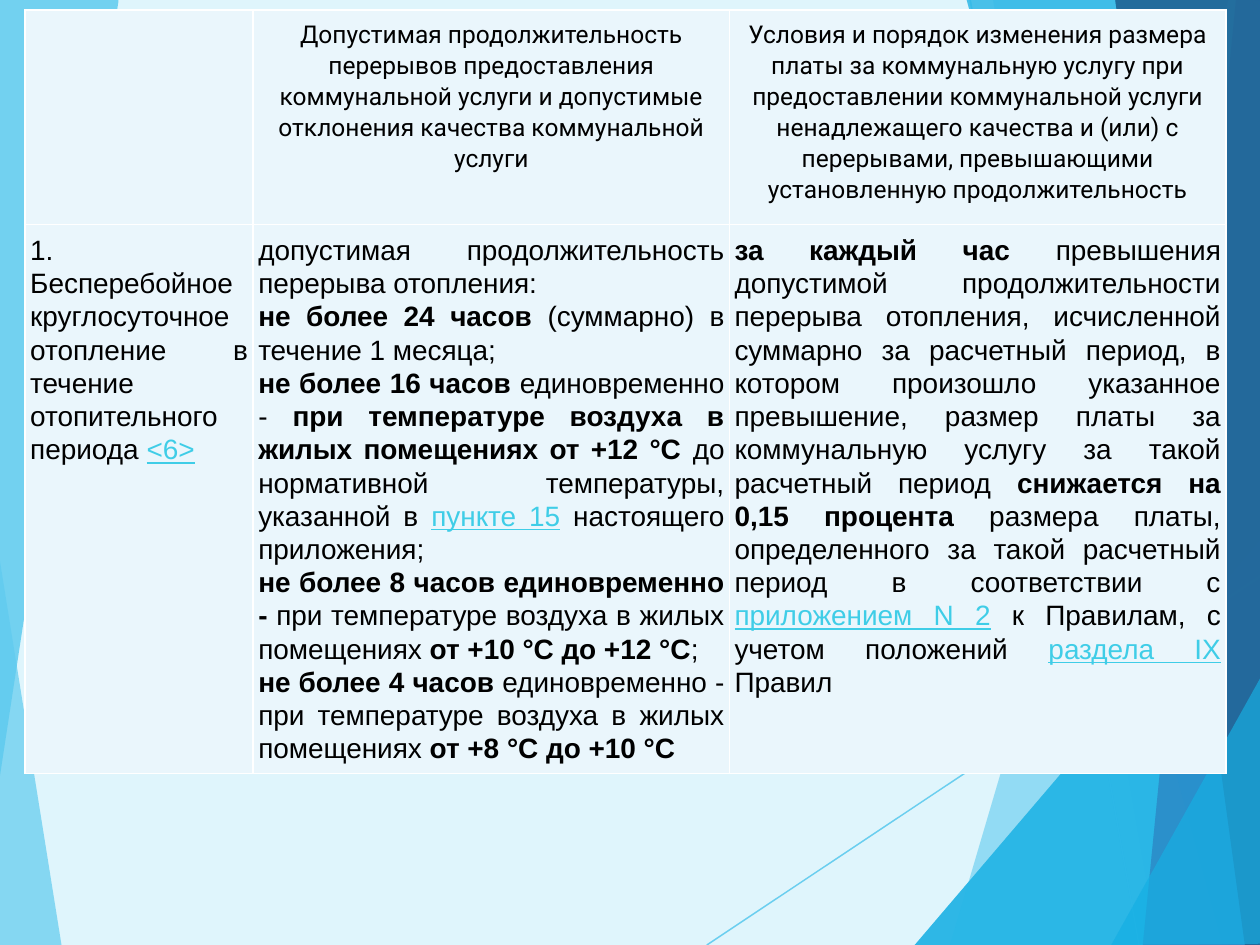
"""Build the slide on heating breaks and fee changes over a faceted blue backdrop."""
from lxml import etree
from pptx import Presentation
from pptx.dml.color import RGBColor
from pptx.enum.shapes import MSO_CONNECTOR
from pptx.enum.text import PP_ALIGN
from pptx.oxml.ns import qn
from pptx.util import Inches, Pt

CENTER, JUSTIFY = PP_ALIGN.CENTER, PP_ALIGN.JUSTIFY
STRAIGHT = MSO_CONNECTOR.STRAIGHT
PALE = RGBColor(0xDF, 0xF5, 0xFC)
SKY = RGBColor(0x5F, 0xCB, 0xEF)
CYAN = RGBColor(0x17, 0xB0, 0xE4)
BLUE = RGBColor(0x2E, 0x83, 0xC3)
NAVY = RGBColor(0x22, 0x62, 0x92)
CELL = RGBColor(0xEA, 0xF6, 0xFC)
LINK = RGBColor(0x3F, 0xCD, 0xE7)
BLACK = RGBColor(0, 0, 0)
WHITE = RGBColor(0xFF, 0xFF, 0xFF)

LEFT_LOW = (SKY, 70, [(-0.01, 4.39), (0.49, 7.51), (-0.01, 7.5)])
LEFT_TOP = (SKY, 85, [(-0.01, 0), (0.94, -0.01), (0.94, 0.01), (-0.01, 6.22)])
RAYS = [(5.61, 7.5, 10.01, 4.57), (7.7, 0, 9.04, 7.5)]
FACETS = [
    (SKY, 36, [(9.75, 0), (7.54, 7.5), (10.02, 7.51), (10.01, 0.01)]),
    (SKY, 20, [(7.88, -0.01), (9.19, 7.5), (10.01, 7.5), (10.01, -0.01)]),
    (CYAN, 66, [(7.26, 7.5), (10, 4.29), (10.01, 7.5)]),
    (CYAN, 50, [(7.67, -0.01), (9.7, 7.5), (10.01, 7.49), (10.01, -0.01)]),
    (BLUE, 70, [(9.81, -0.01), (9.07, 7.5), (10.01, 7.5), (10, -0.01)]),
    (NAVY, 82, [(8.85, -0.01), (9.88, 7.5), (10.02, 7.5), (10, -0.01)]),
    (CYAN, 66, [(8.82, 7.5), (10.02, 5.35), (10.02, 7.49)]),
]

COLS, ROWS = [1.81, 3.78, 3.94], [1.7, 4.33]
HEAD = [
    [],
    [[("Допустимая продолжительность перерывов предоставления коммунальной "
       "услуги и допустимые отклонения качества коммунальной услуги", "")]],
    [[("Условия и порядок изменения размера платы за коммунальную услугу при "
       "предоставлении коммунальной услуги ненадлежащего качества и (или) с "
       "перерывами, превышающими установленную продолжительность", "")]],
]
BODY = [
    [[("1. Бесперебойное круглосуточное отопление в течение отопительного периода ", ""),
      ("<6>", "link")]],
    [
        [("допустимая продолжительность перерыва отопления:", "")],
        [("не более 24 часов ", "bold"), ("(суммарно) в течение 1 месяца;", "")],
        [("не более 16 часов ", "bold"), ("единовременно - ", ""),
         ("при температуре воздуха в жилых помещениях от +12 °C ", "bold"),
         ("до нормативной температуры, указанной в ", ""),
         ("пункте 15", "link"), (" настоящего приложения;", "")],
        [("не более 8 часов единовременно - ", "bold"),
         ("при температуре воздуха в жилых помещениях", ""),
         (" от +10 °C до +12 °C", "bold"), (";", "")],
        [("не более 4 часов ", "bold"),
         ("единовременно - при температуре воздуха в жилых помещениях ", ""),
         ("от +8 °C до +10 °C", "bold")],
    ],
    [[("за каждый час ", "bold"),
      ("превышения допустимой продолжительности перерыва отопления, исчисленной "
       "суммарно за расчетный период, в котором произошло указанное превышение, "
       "размер платы за коммунальную услугу за такой расчетный период ", ""),
      ("снижается на 0,15 процента", "bold"),
      (" размера платы, определенного за такой расчетный период в соответствии с ", ""),
      ("приложением N 2", "link"), (" к Правилам, с учетом положений ", ""),
      ("раздела IX", "link"), (" Правил", "")]],
]
STYLES = [dict(font="Roboto", size=14, align=CENTER),
          dict(font="Arial", size=16, align=JUSTIFY)]


def fade(shape, share):
    for tag in shape.element.spPr.iter(qn("a:srgbClr")):
        etree.SubElement(tag, qn("a:alpha"), val=str(share * 1000))


def facet(shapes, color, share, points):
    spots = [(Inches(x), Inches(y)) for x, y in points]
    pen = shapes.build_freeform(*spots[0], scale=1.0)
    pen.add_line_segments(spots[1:], close=True)
    shape = pen.convert_to_shape()
    shape.shadow.inherit = False
    shape.fill.solid()
    shape.fill.fore_color.rgb = color
    shape.line.fill.background()
    fade(shape, share)


def ray(shapes, ends):
    line = shapes.add_connector(STRAIGHT, *map(Inches, ends))
    line.line.color.rgb = SKY
    line.line.width = Pt(0.75)
    fade(line, 70)
    etree.SubElement(line.element.spPr, qn("a:effectLst"))


def write(frame, paras, font, size, align):
    for i, runs in enumerate(paras):
        para = frame.paragraphs[0] if i == 0 else frame.add_paragraph()
        para.alignment = align
        para.line_spacing = 1.07
        for text, mark in runs:
            run = para.add_run()
            run.text = text
            face = run.font
            face.name, face.size = font, Pt(size)
            face.bold = mark == "bold"
            face.underline = mark == "link"
            face.color.rgb = LINK if mark == "link" else BLACK


def dress(cell):
    cell.margin_left = cell.margin_right = Inches(0.04)
    cell.margin_top = cell.margin_bottom = Inches(0.07)
    props = cell._tc.get_or_add_tcPr()
    for side in "LRTB":
        edge = etree.SubElement(props, qn(f"a:ln{side}"), w=str(Pt(1)))
        fill = etree.SubElement(edge, qn("a:solidFill"))
        etree.SubElement(fill, qn("a:srgbClr"), val=str(WHITE))
    cell.fill.solid()
    cell.fill.fore_color.rgb = CELL


def backdrop(shapes):
    facet(shapes, *LEFT_LOW)
    for _ in range(2):
        for ends in RAYS:
            ray(shapes, ends)
        for part in FACETS:
            facet(shapes, *part)
    facet(shapes, *LEFT_TOP)


def grid(shapes):
    box = map(Inches, (0.2, 0.08, sum(COLS), sum(ROWS)))
    table = shapes.add_table(len(ROWS), len(COLS), *box).table
    for col, width in zip(table.columns, COLS):
        col.width = Inches(width)
    for row, high, texts, style in zip(table.rows, ROWS, (HEAD, BODY), STYLES):
        row.height = Inches(high)
        for cell, paras in zip(row.cells, texts):
            dress(cell)
            write(cell.text_frame, paras, **style)


def main():
    deck = Presentation()
    deck.slide_width, deck.slide_height = Inches(10), Inches(7.5)
    slide = deck.slides.add_slide(deck.slide_layouts[6])
    slide.background.fill.solid()
    slide.background.fill.fore_color.rgb = PALE
    backdrop(slide.shapes)
    grid(slide.shapes)
    deck.save("out.pptx")


if __name__ == "__main__":
    main()
